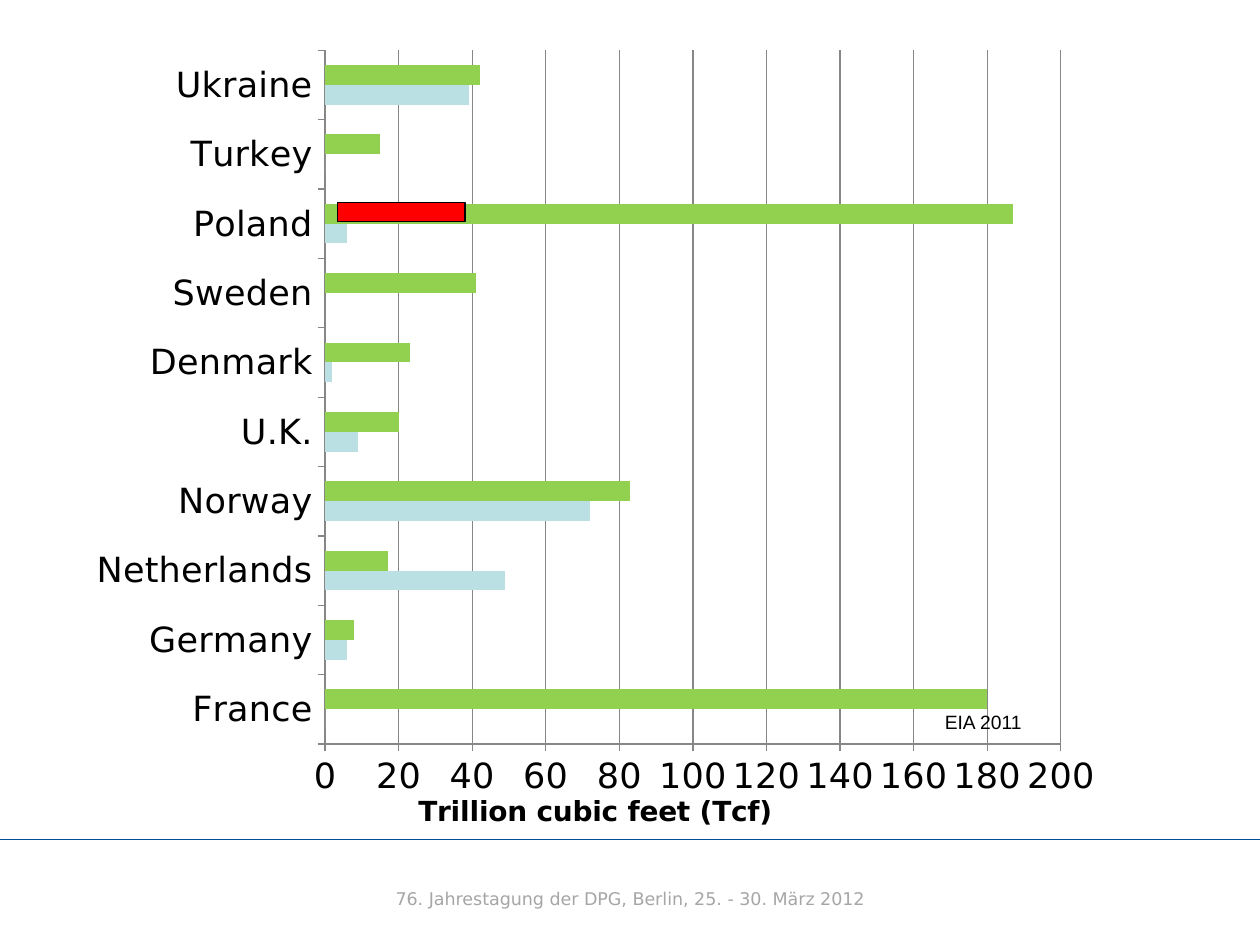
from lxml import etree
from pptx import Presentation
from pptx.chart.data import CategoryChartData
from pptx.dml.color import RGBColor
from pptx.enum.chart import XL_CHART_TYPE as ChartType, XL_TICK_MARK as Tick
from pptx.enum.shapes import MSO_CONNECTOR as Connector, MSO_SHAPE as Shape
from pptx.enum.text import MSO_AUTO_SIZE as AutoSize, PP_ALIGN as Align
from pptx.oxml.ns import qn
from pptx.util import Inches, Pt

FONT = "DejaVu Sans"
GRAY = "878787"
COUNTRIES = ["France", "Germany", "Netherlands", "Norway", "U.K.",
             "Denmark", "Sweden", "Poland", "Turkey", "Ukraine"]
SERIES = [
    ("Series 1", "BBE0E3", [0, 6, 49, 72, 9, 2, None, 6, 0, 39]),
    ("Series 2", "92D050", [180, 8, 17, 83, 20, 23, 41, 187, 15, 42]),
]


def rgb(color):
    return RGBColor.from_string(color)


def set_font(font, size, color="000000", name=FONT, bold=False):
    font.size, font.name, font.bold = Pt(size), name, bold
    font.color.rgb = rgb(color)


def set_line(line, color, width):
    line.color.rgb = rgb(color)
    line.width = Pt(width)


def set_layout(parent, index, **settings):
    """Place a chart part by fractions of the chart area."""
    for old in parent.findall(qn("c:layout")):
        parent.remove(old)
    layout = etree.Element(qn("c:layout"))
    manual = etree.SubElement(layout, qn("c:manualLayout"))
    for tag, value in settings.items():
        etree.SubElement(manual, qn(f"c:{tag}")).set("val", str(value))
    parent.insert(index, layout)


def style_axis(axis):
    axis.major_tick_mark, axis.minor_tick_mark = Tick.OUTSIDE, Tick.NONE
    set_font(axis.tick_labels.font, 20)
    set_line(axis.format.line, GRAY, 0.75)


def add_bar_chart(slide, x, y, w, h):
    data = CategoryChartData()
    data.categories = COUNTRIES
    for name, _, values in SERIES:
        data.add_series(name, values)
    chart = slide.shapes.add_chart(ChartType.BAR_CLUSTERED, Inches(x), Inches(y),
                                   Inches(w), Inches(h), data).chart
    chart.has_legend = chart.has_title = False
    set_font(chart.font, 10)

    # Bars
    plot = chart.plots[0]
    plot.gap_width, plot.overlap, plot.vary_by_categories = 150, 0, False
    for series, (_, color, _) in zip(plot.series, SERIES):
        series.format.fill.solid()
        series.format.fill.fore_color.rgb = rgb(color)

    # Axes
    style_axis(chart.category_axis)
    axis = chart.value_axis
    style_axis(axis)
    axis.minimum_scale, axis.maximum_scale, axis.major_unit = 0, 200, 20
    axis.tick_labels.number_format = "0"
    axis.tick_labels.number_format_is_linked = False
    axis.has_major_gridlines = True
    set_line(axis.major_gridlines.format.line, GRAY, 0.75)
    title = axis.axis_title
    p = title.text_frame.paragraphs[0]
    p.text = "Trillion cubic feet (Tcf)"
    set_font(p.font, 16, bold=True)

    # Positions of the axis title and the plot, in inches over the chart size
    set_layout(title._element, 1, xMode="edge", yMode="edge", x=3.34 / w, y=6 / h)
    set_layout(chart._chartSpace.chart.plotArea, 0, layoutTarget="inner",
               xMode="edge", yMode="edge",
               x=2.64 / w, y=0.06 / h, w=5.84 / w, h=5.58 / h)


def add_text(slide, text, x, y, w, h, size, color, name, align=Align.LEFT, wrap=True):
    tf = slide.shapes.add_textbox(Inches(x), Inches(y), Inches(w), Inches(h)).text_frame
    tf.word_wrap, tf.auto_size = wrap, AutoSize.SHAPE_TO_FIT_TEXT
    p = tf.paragraphs[0]
    p.text, p.alignment = text, align
    set_font(p.font, size, color, name)


def add_red_bar(slide, x, y, w, h):
    sp = slide.shapes.add_shape(Shape.RECTANGLE, Inches(x), Inches(y), Inches(w), Inches(h))
    sp.shadow.inherit = False
    sp.fill.solid()
    sp.fill.fore_color.rgb = rgb("FF0000")
    set_line(sp.line, "000000", 0.75)


def add_rule(slide, y, width):
    line = slide.shapes.add_connector(Connector.STRAIGHT, 0, Inches(y), Inches(width), Inches(y))
    set_line(line.line, "004D95", 0.5)
    etree.SubElement(line._element.spPr, qn("a:effectLst"))


def main():
    prs = Presentation()
    prs.slide_width, prs.slide_height = Inches(10), Inches(7.5)
    slide = prs.slides.add_slide(prs.slide_layouts[6])

    # Rule and chart
    add_rule(slide, 6.66, 10)
    add_bar_chart(slide, -0.06, 0.34, 9.55, 6.3)

    # Label and red bar over the chart
    add_text(slide, "EIA 2011", 7.4, 5.59, 0.84, 0.29, 11, "000000", "Arial", wrap=False)
    add_red_bar(slide, 2.68, 1.61, 1.01, 0.15)

    # Footer
    add_text(slide, "76. Jahrestagung der DPG, Berlin, 25. - 30. März 2012",
             2.72, 7, 4.56, 0.27, 10, "A6A6A6", FONT, Align.CENTER)

    prs.save("out.pptx")


if __name__ == "__main__":
    main()
